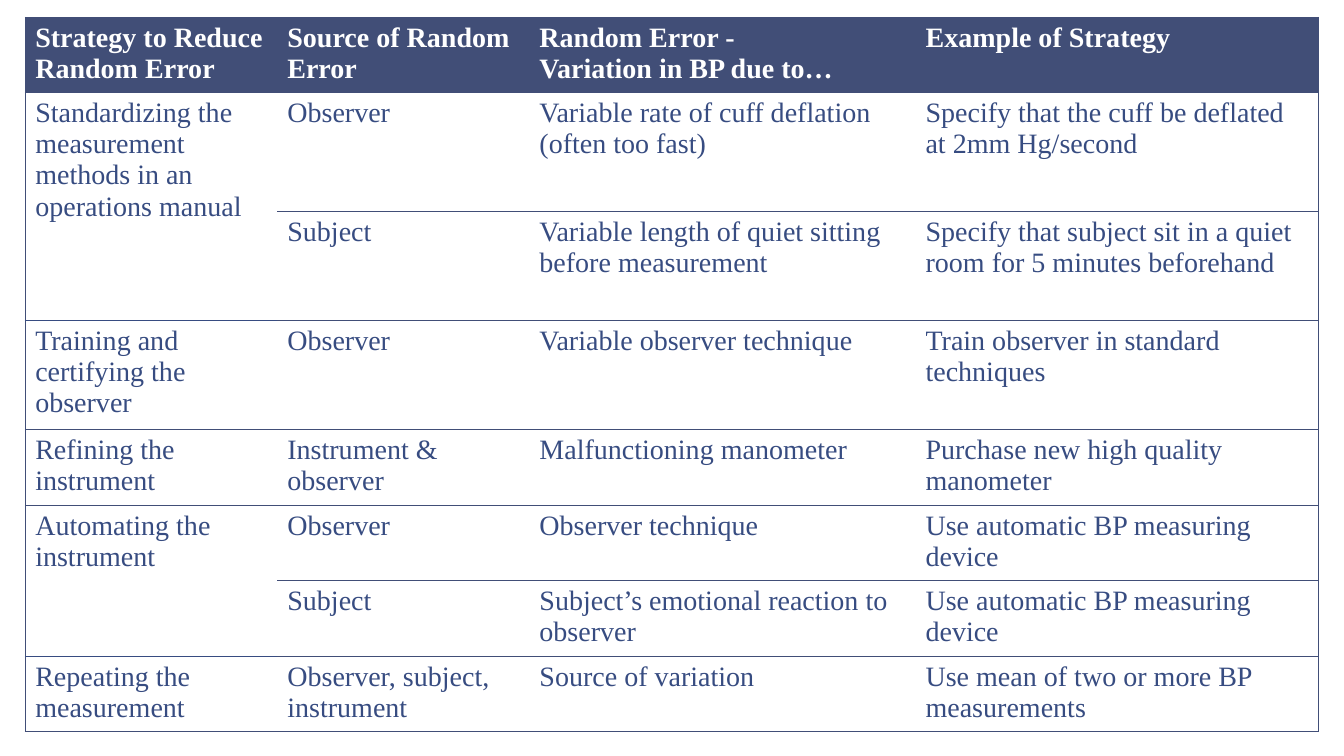
from lxml import etree
from pptx import Presentation
from pptx.dml.color import RGBColor
from pptx.oxml.ns import qn
from pptx.util import Inches, Pt

THEME = {
    "font": "Times New Roman",
    "size": Pt(20),
    "header_fill": "414E77",
    "header_text": "FFFFFF",
    "body_text": "374C81",
    "border": "414E77",
    "group_border": "374C81",
    "border_width": Pt(0.5),
    "group_width": Pt(1),
}
COLUMN_WIDTHS = [2.5, 2.5, 3.83, 4]
ROW_HEIGHTS = [0.75, 1.18, 1.08, 1.08, 0.75, 0.75, 0.75, 0.75]
GROUP_STARTS = [1, 5]
STRATEGIES = [
    ["Strategy to Reduce Random Error", "Source of Random Error",
     "Random Error -\nVariation in BP due to…", "Example of Strategy"],
    ["Standardizing the measurement methods in an operations manual", "Observer",
     "Variable rate of cuff deflation (often too fast)",
     "Specify that the cuff be deflated at 2mm Hg/second"],
    ["", "Subject", "Variable length of quiet sitting before measurement",
     "Specify that subject sit in a quiet room for 5 minutes beforehand"],
    ["Training and certifying the observer", "Observer",
     "Variable observer technique", "Train observer in standard techniques"],
    ["Refining the instrument", "Instrument & observer",
     "Malfunctioning manometer", "Purchase new high quality manometer"],
    ["Automating the instrument", "Observer",
     "Observer technique", "Use automatic BP measuring device"],
    ["", "Subject", "Subject’s emotional reaction to observer",
     "Use automatic BP measuring device"],
    ["Repeating the measurement", "Observer, subject, instrument",
     "Source of variation", "Use mean of two or more BP measurements"],
]


def add_border(cell, side, color, width):
    properties = cell._tc.get_or_add_tcPr()
    line = etree.SubElement(properties, qn(f"a:ln{side}"), w=str(int(width)))
    if color is None:
        etree.SubElement(line, qn("a:noFill"))
    else:
        fill = etree.SubElement(line, qn("a:solidFill"))
        etree.SubElement(fill, qn("a:srgbClr"), val=color)


def write_cell(cell, text, color, bold):
    for index, words in enumerate(text.split("\n")):
        frame = cell.text_frame
        para = frame.add_paragraph() if index else frame.paragraphs[0]
        span = para.add_run()
        span.text = words
        span.font.name = THEME["font"]
        span.font.size = THEME["size"]
        span.font.bold = bold
        span.font.color.rgb = RGBColor.from_string(color)


deck = Presentation()
deck.slide_width = Inches(13.33)
deck.slide_height = Inches(7.5)
page = deck.slides.add_slide(deck.slide_layouts[6])

table = page.shapes.add_table(
    len(ROW_HEIGHTS), len(COLUMN_WIDTHS), Inches(0.25), Inches(0.17),
    Inches(sum(COLUMN_WIDTHS)), Inches(sum(ROW_HEIGHTS))).table
table.first_row = False
table.horz_banding = False
for column, width in zip(table.columns, COLUMN_WIDTHS):
    column.width = Inches(width)
for row, height in zip(table.rows, ROW_HEIGHTS):
    row.height = Inches(height)
for start in GROUP_STARTS:
    table.cell(start, 0).merge(table.cell(start + 1, 0))

last_column = len(COLUMN_WIDTHS) - 1
group_ends = [start + 1 for start in GROUP_STARTS]
for row_index, texts in enumerate(STRATEGIES):
    is_header = row_index == 0
    for column_index, text in enumerate(texts):
        cell = table.cell(row_index, column_index)
        is_first = column_index == 0
        plain = (THEME["border"], THEME["border_width"])
        group = (THEME["group_border"], THEME["group_width"])
        hidden = (None, THEME["border_width"])
        below_group = is_first and row_index - 1 in group_ends
        in_group = is_first and row_index in GROUP_STARTS + group_ends
        top = group if below_group else plain
        if is_first and row_index in group_ends:
            top = hidden
        add_border(cell, "L", *(plain if is_first else hidden))
        add_border(cell, "R", *(plain if column_index == last_column else hidden))
        add_border(cell, "T", *top)
        add_border(cell, "B", *(group if in_group else plain))
        if is_header:
            cell.fill.solid()
            cell.fill.fore_color.rgb = RGBColor.from_string(THEME["header_fill"])
        else:
            cell.fill.background()
        if text:
            color = THEME["header_text"] if is_header else THEME["body_text"]
            write_cell(cell, text, color, is_header)

deck.save("out.pptx")
